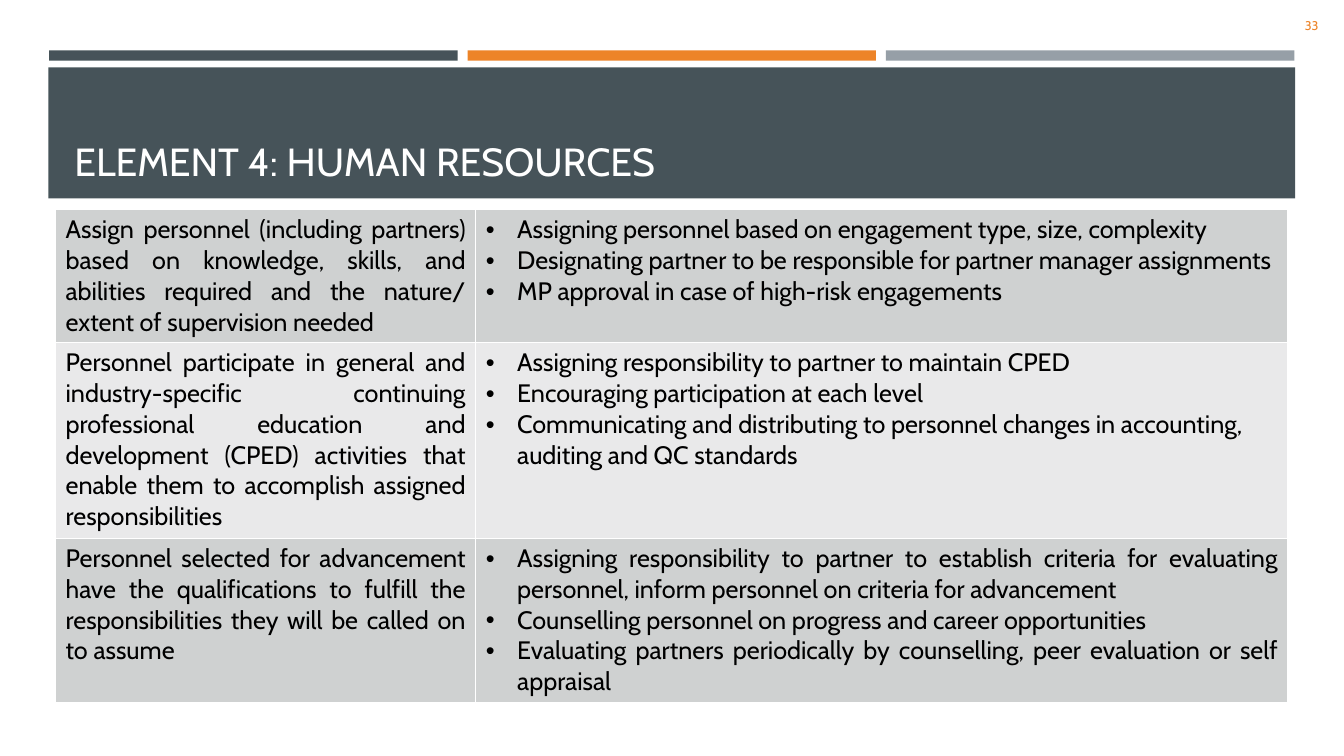
from lxml import etree
from pptx import Presentation
from pptx import util as u
from pptx.dml import color
from pptx.enum import shapes, text
from pptx.oxml import ns

FONT = "Cabin"
COLORS = {
    "slate": "465359",
    "orange": "ED8428",
    "gray": "969FA7",
    "white": "FFFFFF",
    "black": "000000",
    "band_dark": "CFD1D1",
    "band_light": "E9E9EA",
}
LEFT, JUSTIFY = text.PP_ALIGN.LEFT, text.PP_ALIGN.JUSTIFY
ROWS = [
    (3.35, "band_dark", LEFT,
     "Assign personnel (including partners) based on knowledge, skills, and "
     "abilities required and the nature/ extent of supervision needed",
     ["Assigning personnel based on engagement type, size, complexity",
      "Designating partner to be responsible for partner manager assignments",
      "MP approval in case of high-risk engagements"]),
    (4.93, "band_light", LEFT,
     "Personnel participate in general and industry-specific continuing "
     "professional education and development (CPED) activities that enable "
     "them to accomplish assigned responsibilities",
     ["Assigning responsibility to partner to maintain CPED",
      "Encouraging participation at each level",
      "Communicating and distributing to personnel changes in accounting, "
      "auditing and QC standards"]),
    (4.15, "band_dark", JUSTIFY,
     "Personnel selected for advancement have the qualifications to fulfill "
     "the responsibilities they will be called on to assume",
     ["Assigning responsibility to partner to establish criteria for "
      "evaluating personnel, inform personnel on criteria for advancement",
      "Counselling personnel on progress and career opportunities",
      "Evaluating partners periodically by counselling, peer evaluation or "
      "self appraisal"]),
]


def rgb(name):
    """Return the named palette colour."""
    return color.RGBColor.from_string(COLORS[name])


def style(p, size, name, align=LEFT):
    """Format a paragraph and its runs."""
    p.alignment = align
    for r in p.runs:
        r.font.name = FONT
        r.font.size = u.Pt(size)
        r.font.bold = False
        r.font.color.rgb = rgb(name)


def add_block(s, x, y, w, h, name):
    """Add a plain filled rectangle, in centimetres."""
    sp = s.shapes.add_shape(shapes.MSO_SHAPE.RECTANGLE,
                            u.Cm(x), u.Cm(y), u.Cm(w), u.Cm(h))
    sp.shadow.inherit = False
    sp.fill.solid()
    sp.fill.fore_color.rgb = rgb(name)
    sp.line.fill.background()


def add_stripes(s, x, y, w, h, gap=0.25):
    """Divide the box into three equal coloured stripes."""
    names = ["slate", "orange", "gray"]
    stripe = (w - gap * (len(names) - 1)) / len(names)
    for i, name in enumerate(names):
        add_block(s, x + i * (stripe + gap), y, stripe, h, name)


def add_title(s, x, y, w, h):
    """Draw the title band and set the title placeholder in it."""
    add_block(s, x, y, w, h, "slate")
    sp = s.shapes.title
    s.shapes._spTree.append(sp._element)
    sp.left, sp.top = u.Cm(x + 0.4), u.Cm(y + 0.26)
    sp.width, sp.height = u.Cm(w - 0.8), u.Cm(h - 0.48)
    tf = sp.text_frame
    tf.text = "ELEMENT 4: HUMAN RESOURCES"
    tf.auto_size = text.MSO_AUTO_SIZE.NONE
    tf.vertical_anchor = text.MSO_ANCHOR.BOTTOM
    style(tf.paragraphs[0], 28, "white")


def add_page_number(s, x, y, w, h):
    """Write the page number at the right of the box."""
    sp = s.shapes.add_textbox(u.Cm(x), u.Cm(y), u.Cm(w), u.Cm(h))
    tf = sp.text_frame
    tf.word_wrap = True
    tf.vertical_anchor = text.MSO_ANCHOR.MIDDLE
    tf.text = "33"
    style(tf.paragraphs[0], 9, "orange", text.PP_ALIGN.RIGHT)


def add_bullet(p):
    """Give a paragraph a hanging round bullet."""
    pPr = p._p.get_or_add_pPr()
    pPr.set("marL", str(u.Cm(0.79)))
    pPr.set("indent", str(u.Cm(-0.79)))
    etree.SubElement(pPr, ns.qn("a:buFont")).set("typeface", "Arial")
    etree.SubElement(pPr, ns.qn("a:buChar")).set("char", "•")


def format_cell(cell, fill):
    """Give a cell white borders and a fill."""
    tcPr = cell._tc.get_or_add_tcPr()
    for side in ("a:lnL", "a:lnR", "a:lnT", "a:lnB"):
        ln = etree.SubElement(tcPr, ns.qn(side), w=str(u.Pt(1)))
        solid = etree.SubElement(ln, ns.qn("a:solidFill"))
        etree.SubElement(solid, ns.qn("a:srgbClr"), val=COLORS["white"])
    cell.fill.solid()
    cell.fill.fore_color.rgb = rgb(fill)


def add_policy_table(s, x, y, w, first_col):
    """Add the table of policies and their procedures."""
    height = sum(row[0] for row in ROWS)
    table = s.shapes.add_table(len(ROWS), 2, u.Cm(x), u.Cm(y),
                               u.Cm(w), u.Cm(height)).table
    table.first_row = table.horz_banding = False
    table.columns[0].width = u.Cm(first_col)
    table.columns[1].width = u.Cm(w - first_col)
    for i, (h, fill, align, policy, procedures) in enumerate(ROWS):
        table.rows[i].height = u.Cm(h)
        left, right = table.cell(i, 0), table.cell(i, 1)
        left.text_frame.text = policy
        style(left.text_frame.paragraphs[0], 18, "black", JUSTIFY)
        right.text_frame.text = "\n".join(procedures)
        for p in right.text_frame.paragraphs:
            style(p, 18, "black", align)
            add_bullet(p)
        for cell in (left, right):
            format_cell(cell, fill)


def main():
    """Build and save the slide."""
    prs = Presentation()
    prs.slide_width, prs.slide_height = u.Cm(33.87), u.Cm(19.05)
    s = prs.slides.add_slide(prs.slide_layouts[5])
    add_stripes(s, 1.24, 1.27, 31.38, 0.26)
    add_title(s, 1.22, 1.7, 31.42, 3.3)
    add_page_number(s, 30.56, 0.13, 2.92, 1.02)
    add_policy_table(s, 1.4, 5.28, 31.06, 10.59)
    prs.save("out.pptx")


if __name__ == "__main__":
    main()
